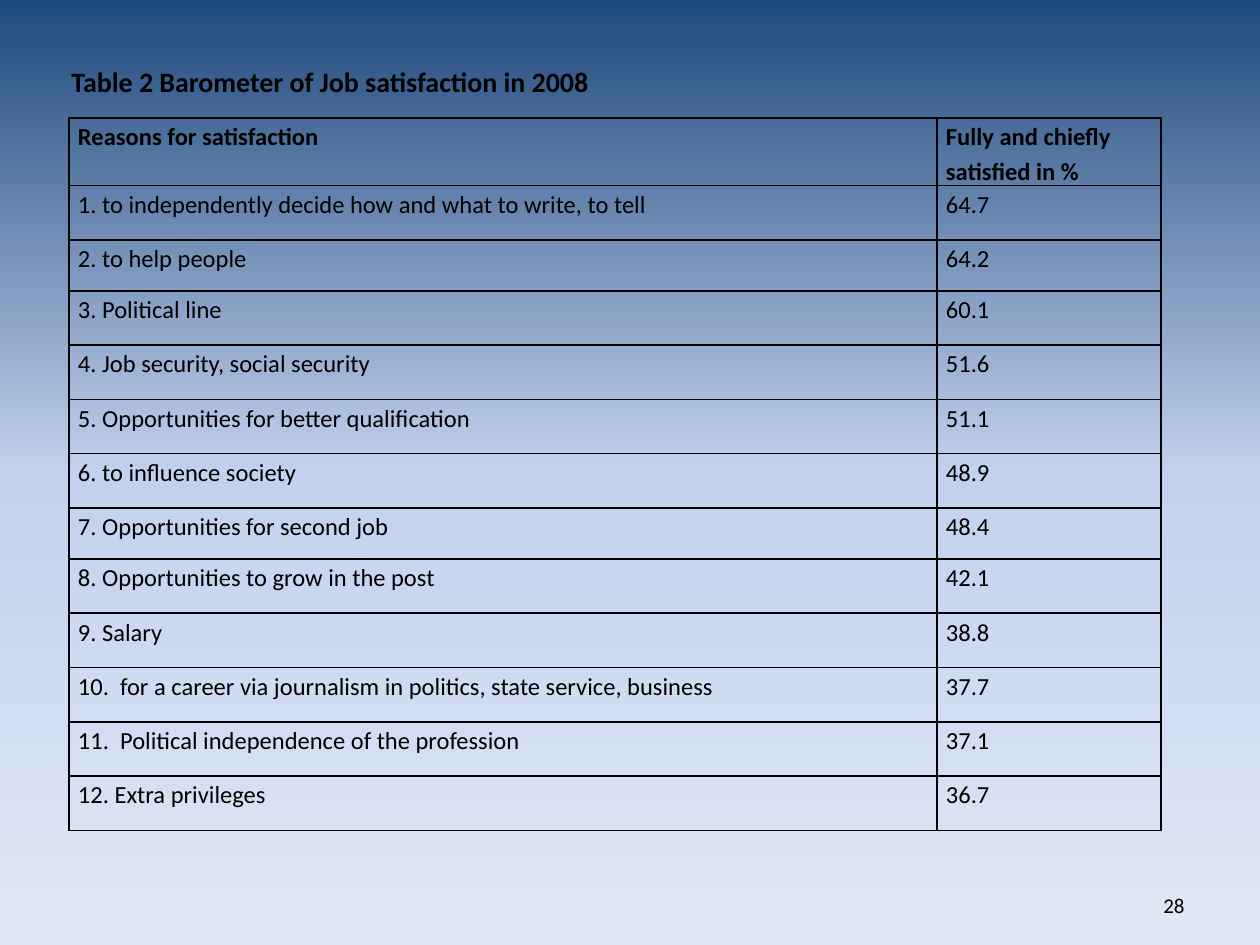
from copy import deepcopy
from dataclasses import dataclass

from lxml import etree
from pptx import Presentation
from pptx.dml.color import RGBColor
from pptx.enum.text import MSO_ANCHOR, PP_ALIGN
from pptx.oxml.ns import qn
from pptx.util import Emu, Pt

PX = 914400 // 126
MIDDLE, BOTTOM = MSO_ANCHOR.MIDDLE, MSO_ANCHOR.BOTTOM
JUSTIFY, RIGHT = PP_ALIGN.JUSTIFY, PP_ALIGN.RIGHT

TITLE = "Table 2 Barometer of Job satisfaction in 2008"
PAGE_NUMBER = "28"
HEADER = ("Reasons for satisfaction", "Fully and chiefly satisfied in %")
REASONS = [
    ("1. to independently decide how and what to write, to tell", "64.7"),
    ("2. to help people", "64.2"),
    ("3. Political line", "60.1"),
    ("4. Job security, social security", "51.6"),
    ("5. Opportunities for better qualification", "51.1"),
    ("6. to influence society", "48.9"),
    ("7. Opportunities for second job", "48.4"),
    ("8. Opportunities to grow in the post", "42.1"),
    ("9. Salary", "38.8"),
    ("10.  for a career via journalism in politics, state service, business", "37.7"),
    ("11.  Political independence of the profession", "37.1"),
    ("12. Extra privileges", "36.7"),
]

SLIDE_SIZE = (1260, 945)
TITLE_BOX = (59, 58, 564, 47)
PAGE_NUMBER_BOX = (903, 861, 294, 63)
TABLE_BOX = (69, 118, 1092, 712)
COLUMN_WIDTHS = (868, 224)
HEADER_HEIGHT = 67
SHORT_ROWS, SHORT_HEIGHT = (2, 7), 51
CELL_INSET = 9


@dataclass(frozen=True)
class Theme:
    font: str = "Calibri"
    ink: str = "000000"
    sky: tuple = ((0, "1F497D"), (0.5, "C2D1ED"), (1, "E1E8F5"))
    title_size: int = 16
    cell_size: int = 14
    page_number_size: int = 12
    border: int = 1


THEME = Theme()


def px(length):
    return Emu(round(length * PX))


def style(paragraph, size, bold=False):
    font = paragraph.font
    font.name, font.size, font.bold = THEME.font, Pt(size), bold
    font.color.rgb = RGBColor.from_string(THEME.ink)


def paint_background(slide):
    fill = slide.background.fill
    fill.gradient()
    fill.gradient_angle = 270
    stop_list = slide.element.find(".//" + qn("a:gsLst"))
    stop_list.insert(1, deepcopy(stop_list[0]))
    for stop, (position, color) in zip(fill.gradient_stops, THEME.sky):
        stop.position = position
        stop.color.rgb = RGBColor.from_string(color)


def add_label(slide, text, box, size, anchor, alignment, bold=False):
    frame = slide.shapes.add_textbox(*map(px, box)).text_frame
    frame.word_wrap = True
    frame.vertical_anchor = anchor
    paragraph = frame.paragraphs[0]
    paragraph.text = text
    paragraph.alignment = alignment
    style(paragraph, size, bold)


def add_borders(cell):
    """Draw all four sides; the lines must precede the cell's fill."""
    properties = cell._tc.get_or_add_tcPr()
    for index, side in enumerate(("lnL", "lnR", "lnT", "lnB")):
        line = etree.Element(qn(f"a:{side}"), w=str(Pt(THEME.border)))
        fill = etree.SubElement(line, qn("a:solidFill"))
        etree.SubElement(fill, qn("a:srgbClr"), val=THEME.ink)
        properties.insert(index, line)


def fill_cell(cell, text, bold):
    cell.fill.background()
    cell.margin_left = cell.margin_right = px(CELL_INSET)
    cell.margin_top = cell.margin_bottom = 0
    paragraph = cell.text_frame.paragraphs[0]
    paragraph.text = text
    paragraph.line_spacing = 1.15
    style(paragraph, THEME.cell_size, bold)
    add_borders(cell)


def add_reasons_table(slide):
    rows = [HEADER, *REASONS]
    table = slide.shapes.add_table(
        len(rows), len(HEADER), *map(px, TABLE_BOX)).table
    table.horz_banding = False
    for column, width in zip(table.columns, COLUMN_WIDTHS):
        column.width = px(width)
    taken = HEADER_HEIGHT + SHORT_HEIGHT * len(SHORT_ROWS)
    row_height = (TABLE_BOX[3] - taken) / (len(REASONS) - len(SHORT_ROWS))
    heights = {0: HEADER_HEIGHT, **dict.fromkeys(SHORT_ROWS, SHORT_HEIGHT)}
    for r, texts in enumerate(rows):
        table.rows[r].height = px(heights.get(r, row_height))
        for c, text in enumerate(texts):
            fill_cell(table.cell(r, c), text, bold=r == 0)


def main():
    deck = Presentation()
    deck.slide_width, deck.slide_height = map(px, SLIDE_SIZE)
    slide = deck.slides.add_slide(deck.slide_layouts[6])
    paint_background(slide)
    add_label(slide, PAGE_NUMBER, PAGE_NUMBER_BOX, THEME.page_number_size,
              BOTTOM, RIGHT)
    add_label(slide, TITLE, TITLE_BOX, THEME.title_size, MIDDLE, JUSTIFY, bold=True)
    add_reasons_table(slide)
    deck.save("out.pptx")


if __name__ == "__main__":
    main()
